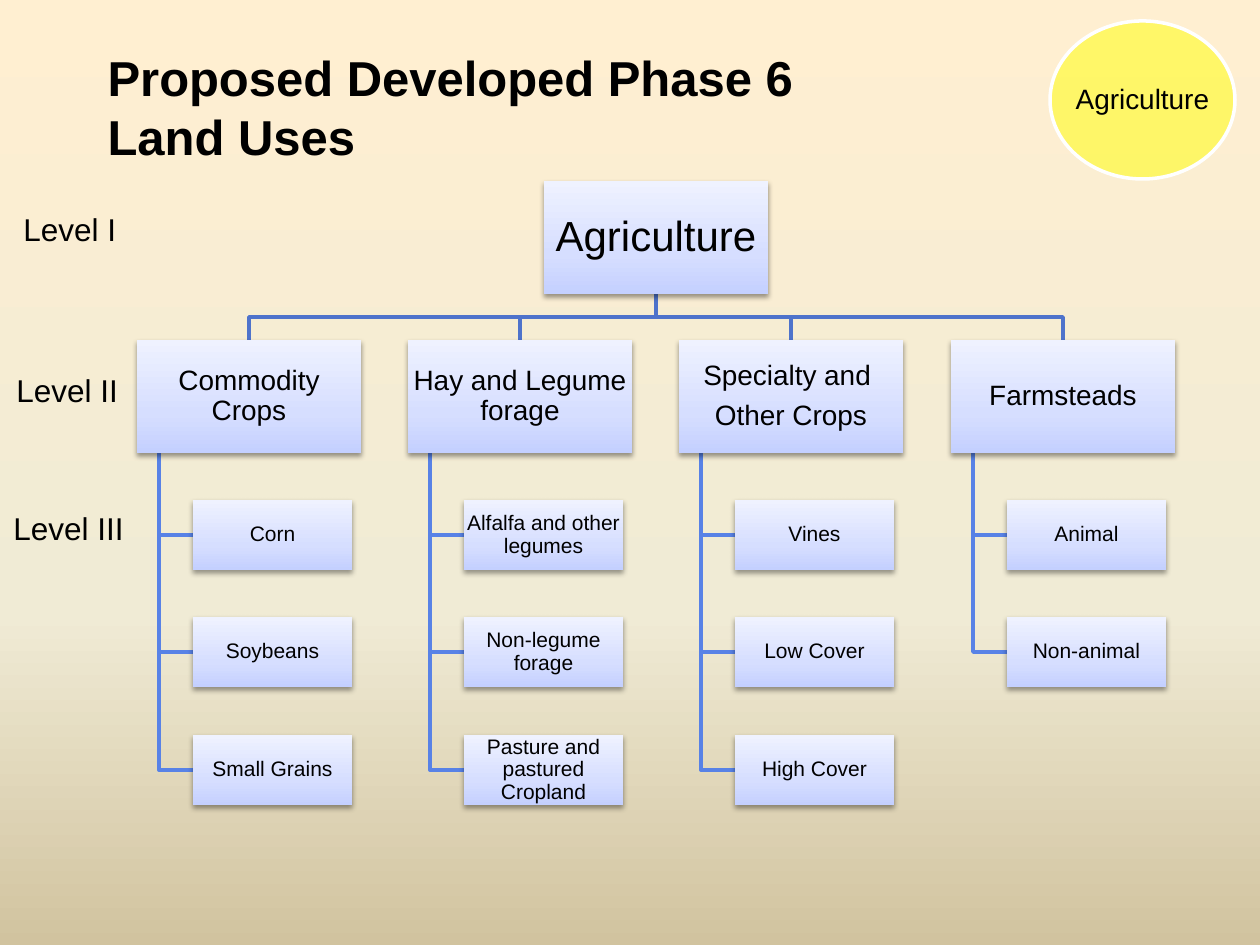
"""Build the agriculture land use hierarchy slide."""
from dataclasses import dataclass

from lxml.etree import SubElement
from pptx import Presentation
from pptx.dml.color import RGBColor
from pptx.enum.shapes import MSO_SHAPE as Shape
from pptx.enum.text import MSO_ANCHOR as Anchor, MSO_AUTO_SIZE as AutoSize, PP_ALIGN as Align
from pptx.oxml import parse_xml
from pptx.oxml.ns import nsdecls, qn
from pptx.util import Emu, Pt

SCALE = 914400 / 126


@dataclass(frozen=True)
class Theme:
    font: str = "Arial"
    ink: str = "000000"
    trunk: str = "4E73CB"
    branch: str = "5882E6"
    badge: str = "FFFF00"
    outline: str = "FFFFFF"
    background: tuple = ((0, "FFEFD1"), (65, "F0EBD5"), (100, "D1C39F"))
    box: tuple = ((0, "C4D0FF"), (35, "D6DEFF"), (100, "EFF2FF"))
    title_size: int = 28
    root_size: int = 24
    label_size: int = 18
    group_size: int = 16
    leaf_size: int = 12
    line_width: int = 2


THEME = Theme()
ROOT = (544, 181)
BOX_WIDTH, BOX_HEIGHT = 224, 113
LEAF_WIDTH, LEAF_HEIGHT = 159, 70
GROUP_LEFT, GROUP_TOP, BUS_TOP = 137, 340, 317
LEAF_TOP, LEAF_INDENT, SPINE_INDENT = 500, 56, 22

GROUPS = [
    ("Commodity Crops", ["Corn", "Soybeans", "Small Grains"]),
    ("Hay and Legume forage",
     ["Alfalfa and other legumes", "Non-legume forage", "Pasture and pastured Cropland"]),
    ("Specialty and \nOther Crops", ["Vines", "Low Cover", "High Cover"]),
    ("Farmsteads", ["Animal", "Non-animal"]),
]
LEVELS = [("Level I", 11, 204), ("Level II", 4, 365), ("Level III", 1, 503)]


def px(*lengths):
    """Turn pixel lengths into EMU."""
    return [Emu(round(length * SCALE)) for length in lengths]


def write_text(shape, text, size, bold=False, align=Align.LEFT, anchor=Anchor.TOP,
               wrap=True, inset=None, line_spacing=None, after=0):
    """Fill a shape with formatted paragraphs, one for each line of text."""
    frame = shape.text_frame
    frame.auto_size, frame.word_wrap, frame.vertical_anchor = AutoSize.NONE, wrap, anchor
    if inset is not None:
        for side in ("left", "top", "right", "bottom"):
            setattr(frame, f"margin_{side}", px(inset)[0])
    frame.text = text
    for paragraph in frame.paragraphs:
        paragraph.alignment = align
        paragraph.line_spacing = line_spacing
        paragraph.space_after = Pt(after)
        font = paragraph.font
        font.name, font.size, font.bold = THEME.font, Pt(size), bold
        font.color.rgb = RGBColor.from_string(THEME.ink)


def write_node(shape, text, size, inset=1, wrap=True):
    """Write the centred text of a chart node."""
    write_text(shape, text, size, align=Align.CENTER, anchor=Anchor.MIDDLE, wrap=wrap,
               inset=inset, line_spacing=0.9, after=round(size * 0.35, 1))


def set_gradient(fill, element, stops, angle):
    """Give a fill a linear gradient with any number of stops."""
    fill.solid()
    solid = element.find(".//" + qn("a:solidFill"))
    marks = "".join(f'<a:gs pos="{place * 1000}"><a:srgbClr val="{color}"/></a:gs>'
                    for place, color in stops)
    gradient = parse_xml(f'<a:gradFill {nsdecls("a")} rotWithShape="1"><a:gsLst>{marks}</a:gsLst>'
                         f'<a:lin ang="{angle * 60000}" scaled="0"/></a:gradFill>')
    solid.getparent().replace(solid, gradient)


def add_shadow(shape):
    """Put a soft shadow below a shape."""
    shape.shadow.inherit = False
    effects = shape._element.spPr.find(qn("a:effectLst"))
    effects.append(parse_xml(
        f'<a:outerShdw {nsdecls("a")} blurRad="{Pt(3.1)}" dist="{Pt(1.6)}" dir="5400000" '
        'rotWithShape="0"><a:srgbClr val="000000"><a:alpha val="38000"/></a:srgbClr></a:outerShdw>'))


def add_node(shapes, text, left, top, width, height, size, inset=1):
    """Add a shaded box with text to the hierarchy."""
    box = shapes.add_shape(Shape.RECTANGLE, *px(left, top, width, height))
    set_gradient(box.fill, box._element.spPr, THEME.box, 270)
    box.line.fill.background()
    add_shadow(box)
    write_node(box, text, size, inset)


def add_elbow(shapes, points, color):
    """Add an open bent line through the points."""
    builder = shapes.build_freeform(*points[0], scale=SCALE)
    builder.add_line_segments(points[1:], close=False)
    line = builder.convert_to_shape()
    line.fill.background()
    line.line.color.rgb = RGBColor.from_string(color)
    line.line.width = Pt(THEME.line_width)
    line.shadow.inherit = False


def add_hierarchy(slide):
    """Add the tree with its lines behind its boxes."""
    shapes = slide.shapes.add_group_shape().shapes
    lefts = [GROUP_LEFT + 814 * column // 3 for column in range(len(GROUPS))]
    leaf_tops = [LEAF_TOP + 235 * row // 2 for row in range(3)]
    middle, root_bottom = ROOT[0] + BOX_WIDTH // 2, ROOT[1] + BOX_HEIGHT
    for left, (_, leaves) in zip(lefts, GROUPS):
        center, spine = left + BOX_WIDTH // 2, left + SPINE_INDENT
        add_elbow(shapes, [(middle, root_bottom), (middle, BUS_TOP), (center, BUS_TOP),
                           (center, GROUP_TOP)], THEME.trunk)
        for top, _ in zip(leaf_tops, leaves):
            level = top + LEAF_HEIGHT // 2
            add_elbow(shapes, [(spine, GROUP_TOP + BOX_HEIGHT), (spine, level),
                               (left + LEAF_INDENT, level)], THEME.branch)
    add_node(shapes, "Agriculture", *ROOT, BOX_WIDTH, BOX_HEIGHT, THEME.root_size, inset=2)
    for left, (name, leaves) in zip(lefts, GROUPS):
        add_node(shapes, name, left, GROUP_TOP, BOX_WIDTH, BOX_HEIGHT, THEME.group_size)
        for top, leaf in zip(leaf_tops, leaves):
            add_node(shapes, leaf, left + LEAF_INDENT, top, LEAF_WIDTH, LEAF_HEIGHT,
                     THEME.leaf_size)


def add_title(slide, text):
    """Place and write the slide title."""
    title = slide.shapes.title
    title.left, title.top, title.width, title.height = px(95, 41, 834, 126)
    write_text(title, text, THEME.title_size, bold=True)


def add_label(slide, text, left, top):
    """Add the label of a hierarchy level."""
    write_text(slide.shapes.add_textbox(*px(left, top, 166, 50)), text, THEME.label_size)


def add_badge(slide, text):
    """Add the translucent oval in the corner."""
    badge = slide.shapes.add_shape(Shape.OVAL, *px(1050, 21, 185, 158))
    badge.shadow.inherit = False
    badge.fill.solid()
    badge.fill.fore_color.rgb = RGBColor.from_string(THEME.badge)
    color = badge._element.spPr.find(".//" + qn("a:srgbClr"))
    SubElement(color, qn("a:alpha")).set("val", "50000")
    badge.line.color.rgb = RGBColor.from_string(THEME.outline)
    badge.line.width = Pt(THEME.line_width)
    write_node(badge, text, THEME.group_size, inset=0, wrap=False)


def main():
    """Create the slide and save it."""
    presentation = Presentation()
    presentation.slide_width, presentation.slide_height = px(1260, 945)
    slide = presentation.slides.add_slide(presentation.slide_layouts[5])
    set_gradient(slide.background.fill, slide._element, THEME.background, 90)
    add_title(slide, "Proposed Developed Phase 6 Land Uses")
    add_hierarchy(slide)
    for label in LEVELS:
        add_label(slide, *label)
    add_badge(slide, "Agriculture")
    presentation.save("out.pptx")


if __name__ == "__main__":
    main()
